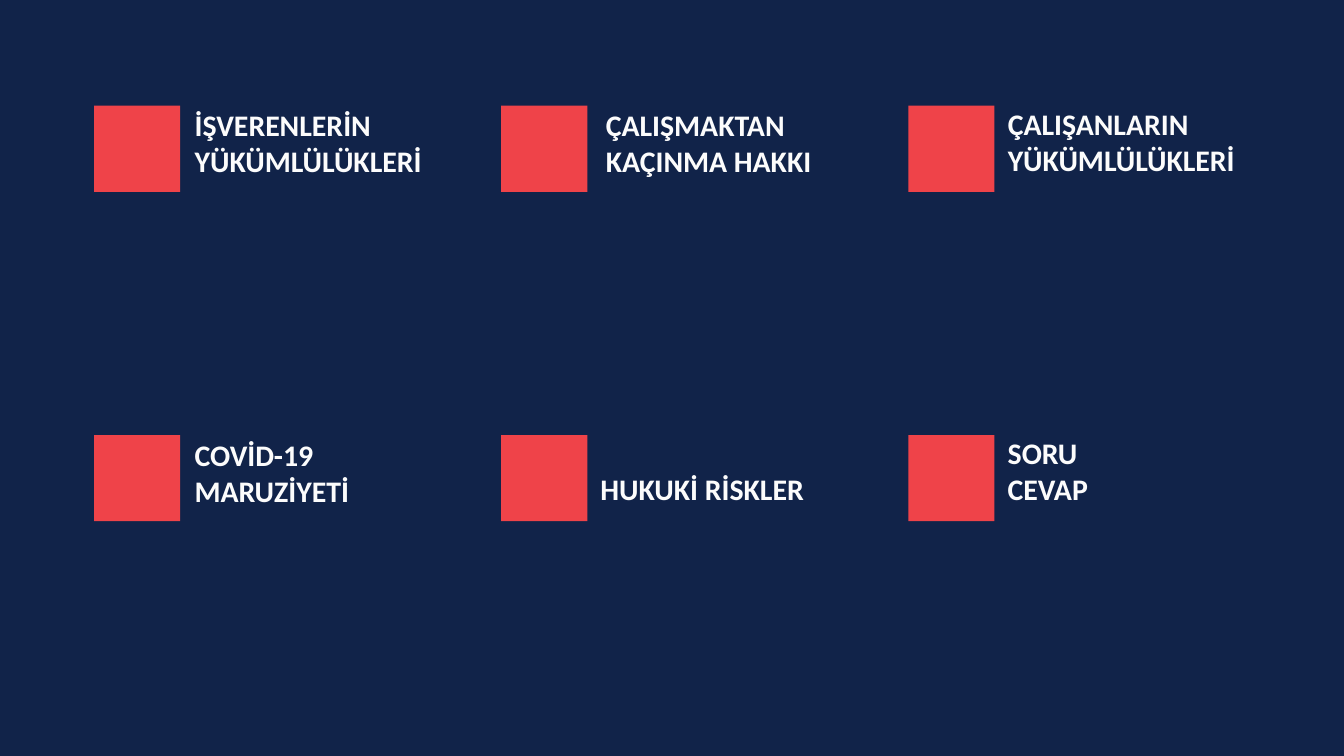
"""Builds an agenda slide with six topics, each beside a red square."""
from pptx import Presentation
from pptx import util as u
from pptx.dml import color as c
from pptx.enum import shapes, text

HUES = {"navy": "112349", "red": "EF4349", "white": "FCFCFC"}
LEFT, TOP, SIDE = 50.4, 56.6, 46.2
COL, ROW = 218.1, 176.5
TALL, PAD = 56.9, 7.2

TOPICS = [
    (["İŞVERENLERİN YÜKÜMLÜLÜKLERİ"], 97.2, 46.1, 143.3),
    (["ÇALIŞMAKTAN KAÇINMA HAKKI"], 317.5, 46.1, 131.8),
    (["ÇALIŞANLARIN YÜKÜMLÜLÜKLERİ"], 532.8, 45.4, 143.3),
    (["COVİD-19 MARUZİYETİ"], 97.2, 222.5, 124),
    (["HUKUKİ RİSKLER"], 314.6, 221.8, 124),
    (["SORU", "CEVAP"], 532.8, 221.8, 124),
]


def hue(name):
    return c.RGBColor.from_string(HUES[name])


deck = Presentation()
deck.slide_width, deck.slide_height = u.Pt(720), u.Pt(405)
slide = deck.slides.add_slide(deck.slide_layouts[6])
slide.background.fill.solid()
slide.background.fill.fore_color.rgb = hue("navy")

for num, (lines, left, top, wide) in enumerate(TOPICS):
    row, col = divmod(num, 3)
    square = slide.shapes.add_shape(
        shapes.MSO_SHAPE.RECTANGLE,
        u.Pt(LEFT + col * COL), u.Pt(TOP + row * ROW), u.Pt(SIDE), u.Pt(SIDE))
    square.shadow.inherit = False
    square.fill.solid()
    square.fill.fore_color.rgb = hue("red")
    square.line.fill.background()

    label = slide.shapes.add_textbox(u.Pt(left), u.Pt(top), u.Pt(wide), u.Pt(TALL))
    frame = label.text_frame
    frame.word_wrap = True
    frame.vertical_anchor = text.MSO_ANCHOR.BOTTOM
    frame.margin_left = frame.margin_right = u.Pt(PAD)
    frame.margin_top = frame.margin_bottom = u.Pt(PAD)
    for at, line in enumerate(lines):
        para = frame.add_paragraph() if at else frame.paragraphs[0]
        run = para.add_run()
        run.text = line
        run.font.name = "Calibri"
        run.font.size = u.Pt(16)
        run.font.bold = True
        run.font.color.rgb = hue("white")

deck.save("out.pptx")
